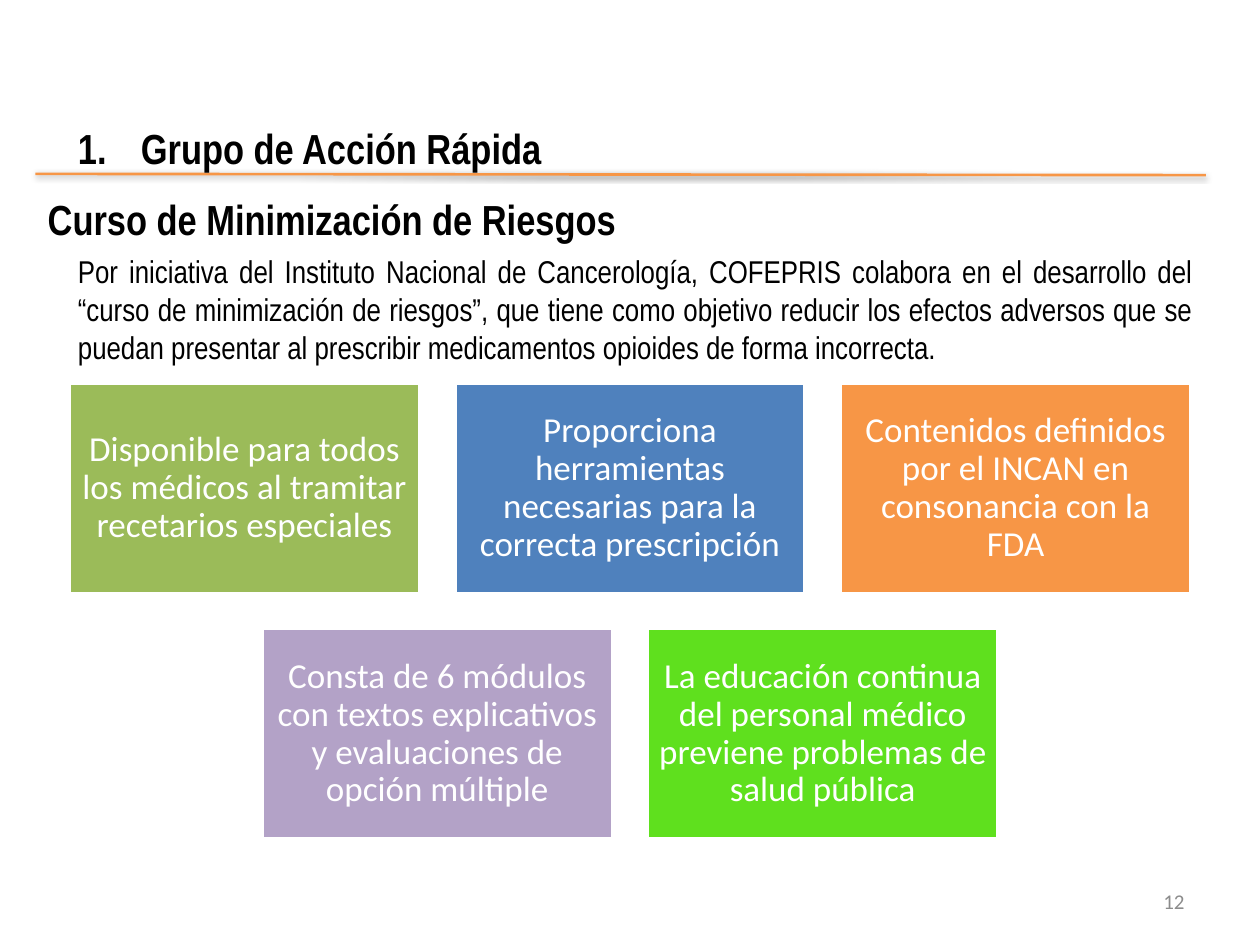
from dataclasses import dataclass

from lxml.etree import SubElement
from pptx import Presentation
from pptx.dml.color import RGBColor
from pptx.enum.shapes import MSO_CONNECTOR, MSO_SHAPE
from pptx.enum.text import MSO_ANCHOR, PP_ALIGN
from pptx.oxml import parse_xml
from pptx.oxml.ns import nsdecls, qn
from pptx.util import Inches, Pt


@dataclass(frozen=True)
class Theme:
    heading_font: str = "Arial Narrow"
    card_font: str = "Calibri"
    ink: str = "000000"
    muted: str = "8C8C8C"
    white: str = "FFFFFF"
    green: str = "9BBB59"
    blue: str = "4F81BD"
    orange: str = "F79646"
    purple: str = "B3A2C7"
    lime: str = "5FE01E"
    heading_size: int = 24
    card_size: int = 20
    body_size: int = 18
    number_size: int = 12


class SlideBuilder:
    def __init__(self, slide, theme):
        self.slide = slide
        self.theme = theme

    def set_text(self, frame, text, font, size, color, bold=False, align=PP_ALIGN.LEFT):
        frame.word_wrap = True
        frame.text = text
        paragraph = frame.paragraphs[0]
        paragraph.alignment = align
        style = paragraph.runs[0].font
        style.name, style.size, style.bold = font, Pt(size), bold
        style.color.rgb = RGBColor.from_string(color)
        return paragraph

    def text_frame(self, left, top, width, height):
        return self.slide.shapes.add_textbox(
            Inches(left), Inches(top), Inches(width), Inches(height)
        ).text_frame

    def heading(self, text, left, top, width, numbered=False):
        theme = self.theme
        frame = self.text_frame(left, top, width, 0.45)
        paragraph = self.set_text(
            frame, text, theme.heading_font, theme.heading_size, theme.ink, bold=True
        )
        if numbered:
            properties = paragraph._p.get_or_add_pPr()
            properties.set("marL", str(Inches(0.5)))
            properties.set("indent", str(-Inches(0.5)))
            SubElement(properties, qn("a:buFont"), typeface="+mj-lt")
            SubElement(properties, qn("a:buAutoNum"), type="arabicPeriod")

    def body(self, text, left, top, width, height):
        theme = self.theme
        self.set_text(
            self.text_frame(left, top, width, height), text,
            theme.heading_font, theme.body_size, theme.ink, align=PP_ALIGN.JUSTIFY,
        )

    def page_number(self, number):
        theme = self.theme
        frame = self.text_frame(7.17, 6.95, 2.33, 0.4)
        frame.vertical_anchor = MSO_ANCHOR.MIDDLE
        self.set_text(
            frame, number, theme.card_font, theme.number_size, theme.muted,
            align=PP_ALIGN.RIGHT,
        )

    def shadowed_rule(self, left, top, right, bottom):
        rule = self.slide.shapes.add_connector(
            MSO_CONNECTOR.STRAIGHT,
            Inches(left), Inches(top), Inches(right), Inches(bottom),
        )
        rule.line.color.rgb = RGBColor.from_string(self.theme.orange)
        rule.line.width = Pt(1.5)
        rule._element.spPr.append(parse_xml(
            f'<a:effectLst {nsdecls("a")}>'
            f'<a:outerShdw blurRad="{Pt(3.1)}" dist="{Pt(1)}" dir="5400000" rotWithShape="0">'
            f'<a:srgbClr val="{self.theme.ink}"><a:alpha val="38000"/></a:srgbClr>'
            "</a:outerShdw></a:effectLst>"
        ))

    def card(self, text, color, left, top, width, height):
        theme = self.theme
        card = self.slide.shapes.add_shape(
            MSO_SHAPE.RECTANGLE,
            Inches(left), Inches(top), Inches(width), Inches(height),
        )
        card.shadow.inherit = False
        card.fill.solid()
        card.fill.fore_color.rgb = RGBColor.from_string(color)
        card.line.color.rgb = RGBColor.from_string(theme.white)
        card.line.width = Pt(2)
        frame = card.text_frame
        frame.vertical_anchor = MSO_ANCHOR.MIDDLE
        frame.margin_left = frame.margin_right = Inches(0.08)
        frame.margin_top = frame.margin_bottom = Inches(0.08)
        paragraph = self.set_text(
            frame, text, theme.card_font, theme.card_size, theme.white,
            align=PP_ALIGN.CENTER,
        )
        paragraph.line_spacing = 0.9

    def card_rows(self, rows, top, width, height, gap):
        """Stack rows of cards, each row centred on the slide."""
        for row_index, row in enumerate(rows):
            row_width = len(row) * (width + gap) - gap
            row_left = (10 - row_width) / 2
            row_top = top + row_index * (height + gap)
            for column, (text, color) in enumerate(row):
                self.card(text, color, row_left + column * (width + gap),
                          row_top, width, height)


def main():
    presentation = Presentation()
    presentation.slide_width, presentation.slide_height = Inches(10), Inches(7.5)
    theme = Theme()
    builder = SlideBuilder(
        presentation.slides.add_slide(presentation.slide_layouts[6]), theme
    )

    builder.page_number("12")
    builder.shadowed_rule(0.28, 1.38, 9.57, 1.39)
    builder.heading("Curso de Minimización de Riesgos", 0.28, 1.49, 9.21)
    builder.body(
        "Por iniciativa del Instituto Nacional de Cancerología, COFEPRIS colabora "
        "en el desarrollo del “curso de minimización de riesgos”, que tiene como "
        "objetivo reducir los efectos adversos que se puedan presentar al prescribir "
        "medicamentos opioides de forma incorrecta.",
        0.52, 1.95, 9.05, 1.01,
    )
    builder.heading("Grupo de Acción Rápida", 0.52, 0.92, 8.9, numbered=True)

    course_features = [
        [
            ("Disponible para todos los médicos al tramitar recetarios especiales",
             theme.green),
            ("Proporciona herramientas necesarias para la correcta prescripción",
             theme.blue),
            ("Contenidos definidos por el INCAN en consonancia con la FDA",
             theme.orange),
        ],
        [
            ("Consta de 6 módulos con textos explicativos y evaluaciones de opción múltiple",
             theme.purple),
            ("La educación continua del personal médico previene problemas de salud pública",
             theme.lime),
        ],
    ]
    builder.card_rows(course_features, top=3.04, width=2.78, height=1.67, gap=0.28)

    presentation.save("out.pptx")


if __name__ == "__main__":
    main()
